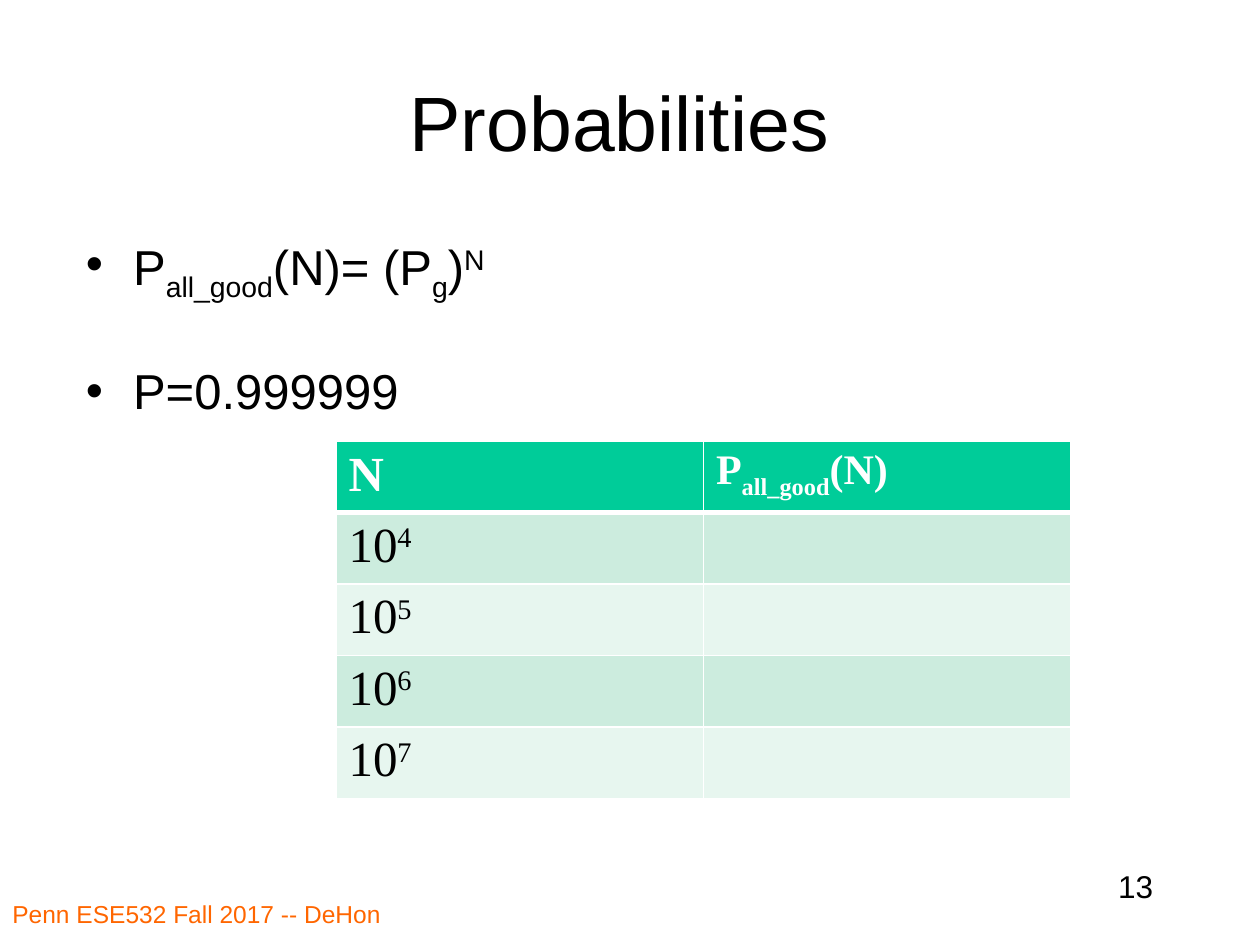
"""Builds the slide on the probability that all N parts are good."""
from dataclasses import dataclass

from lxml.etree import SubElement
from pptx import Presentation
from pptx.dml.color import RGBColor
from pptx.enum.text import MSO_ANCHOR, PP_ALIGN
from pptx.oxml import parse_xml
from pptx.oxml.ns import nsdecls, qn
from pptx.util import Pt


@dataclass(frozen=True)
class Theme:
    ink: str = "000000"
    paper: str = "FFFFFF"
    accent: str = "FF6600"
    header: str = "00CC99"
    bands: tuple = ("CCECDE", "E7F6EF")
    sans: str = "Arial"
    serif: str = "Times New Roman"
    title: int = 44
    body: int = 28
    column_head: int = 24
    number: int = 18
    footer: int = 14


THEME = Theme()
SUBSCRIPT, SUPERSCRIPT = -25000, 30000
ALL_GOOD = [("P", 0), ("all_good", SUBSCRIPT)]


def write(para, text, size, color=THEME.ink, font=THEME.sans, bold=False,
          align=PP_ALIGN.LEFT):
    para.alignment = align
    spans = [(text, 0)] if isinstance(text, str) else text
    for words, baseline in spans:
        span = para.add_run()
        span.text = words
        span.font.size = Pt(size)
        span.font.name = font
        span.font.bold = bold
        span.font.color.rgb = RGBColor.from_string(color)
        if baseline:
            span.font._element.set("baseline", str(baseline))


def add_box(page, left, top, width, height, anchor=MSO_ANCHOR.TOP):
    box = page.shapes.add_textbox(Pt(left), Pt(top), Pt(width), Pt(height))
    box.text_frame.word_wrap = True
    box.text_frame.vertical_anchor = anchor
    return box.text_frame


def add_bullet(para, text, space_before):
    para.line_spacing = 0.9
    para.space_before = Pt(space_before)
    write(para, text, THEME.body)
    properties = para._p.get_or_add_pPr()
    properties.set("marL", str(Pt(27)))
    properties.set("indent", str(-Pt(27)))
    SubElement(properties, qn("a:buFont"), typeface=THEME.sans)
    SubElement(properties, qn("a:buChar"), char="•")


def style_cell(cell, fill, bottom=1):
    cell.fill.solid()
    cell.fill.fore_color.rgb = RGBColor.from_string(fill)
    widths = {"lnL": 1, "lnR": 1, "lnT": 1, "lnB": bottom}
    for position, (side, width) in enumerate(widths.items()):
        border = parse_xml(
            f'<a:{side} {nsdecls("a")} w="{Pt(width)}"><a:solidFill>'
            f'<a:srgbClr val="{THEME.paper}"/></a:solidFill></a:{side}>')
        cell._tc.get_or_add_tcPr().insert(position, border)


def add_probability_table(page, exponents):
    rows = len(exponents) + 1
    table = page.shapes.add_table(
        rows, 2, Pt(192), Pt(252), Pt(420), Pt(37.5 * rows)).table
    headings = [("N", THEME.body), (ALL_GOOD + [("(N)", 0)], THEME.column_head)]
    for column, (text, size) in enumerate(headings):
        cell = table.cell(0, column)
        style_cell(cell, THEME.header, bottom=3)
        write(cell.text_frame.paragraphs[0], text, size, color=THEME.paper,
              font=THEME.serif, bold=True)
    for row, exponent in enumerate(exponents, start=1):
        for column in range(2):
            style_cell(table.cell(row, column), THEME.bands[(row - 1) % 2])
        write(table.cell(row, 0).text_frame.paragraphs[0],
              [("10", 0), (str(exponent), SUPERSCRIPT)], THEME.body,
              font=THEME.serif)


def main():
    deck = Presentation()
    deck.slide_width, deck.slide_height = Pt(720), Pt(540)
    page = deck.slides.add_slide(deck.slide_layouts[6])

    title = add_box(page, 48, 24, 612, 90, MSO_ANCHOR.MIDDLE)
    write(title.paragraphs[0], "Probabilities", THEME.title,
          align=PP_ALIGN.CENTER)

    body = add_box(page, 42, 132, 612, 360)
    formula = ALL_GOOD + [("(N)= (P", 0), ("g", SUBSCRIPT), (")", 0),
                          ("N", SUPERSCRIPT)]
    add_bullet(body.paragraphs[0], formula, 5.6)
    add_bullet(body.add_paragraph(), "P=0.999999", 40)

    add_probability_table(page, range(4, 8))

    footer = add_box(page, 0, 510, 294, 30)
    write(footer.paragraphs[0], "Penn ESE532 Fall 2017 -- DeHon",
          THEME.footer, color=THEME.accent)
    number = add_box(page, 516, 492, 150, 36)
    write(number.paragraphs[0], "13", THEME.number, align=PP_ALIGN.RIGHT)
    deck.save("out.pptx")


if __name__ == "__main__":
    main()
